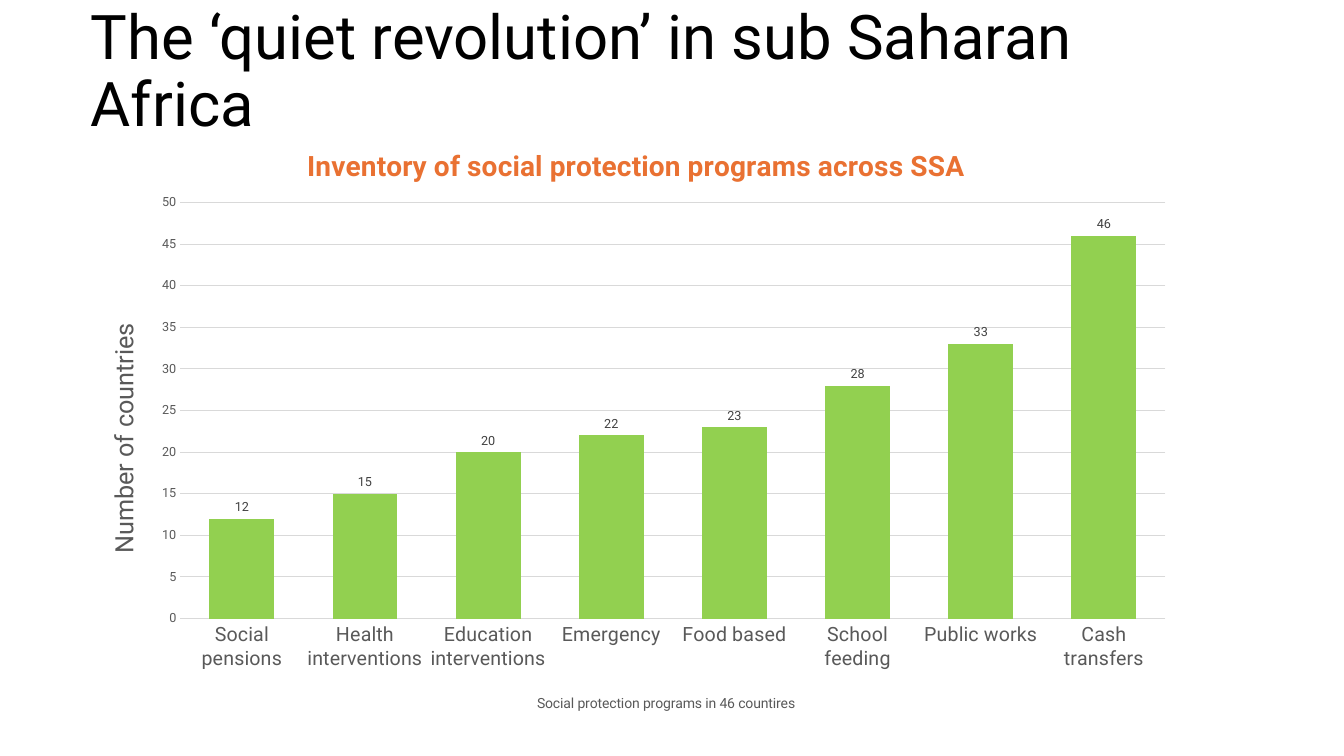
from lxml import etree
from pptx import Presentation
from pptx.chart.data import CategoryChartData
from pptx.dml.color import RGBColor
from pptx.enum.chart import XL_CHART_TYPE as CT, XL_LABEL_POSITION as LP, XL_TICK_MARK as TM
from pptx.enum.text import MSO_ANCHOR, MSO_AUTO_SIZE, PP_ALIGN
from pptx.oxml.ns import qn
from pptx.util import Inches, Pt

BLACK = RGBColor(0x00, 0x00, 0x00)
GREY = RGBColor(0x59, 0x59, 0x59)
DARK = RGBColor(0x40, 0x40, 0x40)
LIGHT = RGBColor(0xD9, 0xD9, 0xD9)
ORANGE = RGBColor(0xE9, 0x71, 0x32)
GREEN = RGBColor(0x92, 0xD0, 0x50)
FONT = "Roboto"


def write(tf, text, size=10, color=GREY, bold=False):
    p = tf.paragraphs[0]
    r = p.add_run()
    r.text = text
    r.font.name = FONT
    r.font.size = Pt(size)
    r.font.bold = bold
    r.font.color.rgb = color
    return p


def place(parent, index, **spots):
    for old in parent.findall(qn("c:layout")):
        parent.remove(old)
    layout = parent.makeelement(qn("c:layout"))
    parent.insert(index, layout)
    manual = etree.SubElement(layout, qn("c:manualLayout"))
    if "w" in spots:
        etree.SubElement(manual, qn("c:layoutTarget")).set("val", "inner")
    for mode in ("xMode", "yMode"):
        etree.SubElement(manual, qn("c:" + mode)).set("val", "edge")
    for name, value in spots.items():
        etree.SubElement(manual, qn("c:" + name)).set("val", str(value))


prs = Presentation()
prs.slide_width = Inches(13.33)
prs.slide_height = Inches(7.5)
s = prs.slides.add_slide(prs.slide_layouts[5])

title = s.shapes.title
title.left, title.top = Inches(0.8), Inches(0)
title.width, title.height = Inches(11.5), Inches(1.45)
tf = title.text_frame
tf.word_wrap = True
tf.auto_size = MSO_AUTO_SIZE.NONE
tf.vertical_anchor = MSO_ANCHOR.MIDDLE
p = write(tf, "The ‘quiet revolution’ in sub Saharan Africa", size=44, color=BLACK)
p.alignment = PP_ALIGN.LEFT
p.line_spacing = 0.9

programs = {
    "Social pensions": 12,
    "Health interventions": 15,
    "Education interventions": 20,
    "Emergency": 22,
    "Food based": 23,
    "School feeding": 28,
    "Public works": 33,
    "Cash transfers": 46,
}
data = CategoryChartData()
data.categories = list(programs)
data.add_series("Series 1", list(programs.values()))
chart = s.shapes.add_chart(
    CT.COLUMN_CLUSTERED, Inches(0.8), Inches(1.16), Inches(10.98), Inches(6.07), data
).chart
chart.has_legend = False
chart.font.name = FONT
chart.font.size = Pt(10)

plot = chart.plots[0]
plot.gap_width = 90
plot.overlap = -27
plot.vary_by_categories = False
series = plot.series[0]
series.format.fill.solid()
series.format.fill.fore_color.rgb = GREEN
plot.has_data_labels = True
labels = plot.data_labels
labels.show_value = True
labels.position = LP.OUTSIDE_END

cat_axis, val_axis = chart.category_axis, chart.value_axis
for font, size, color in (
    (cat_axis.tick_labels.font, 14, GREY),
    (val_axis.tick_labels.font, 9, GREY),
    (labels.font, 9, DARK),
):
    font.name = FONT
    font.size = Pt(size)
    font.color.rgb = color
for axis in (cat_axis, val_axis):
    axis.major_tick_mark = axis.minor_tick_mark = TM.NONE
val_axis.minimum_scale = 0
val_axis.maximum_scale = 50
val_axis.major_unit = 5
val_axis.format.line.fill.background()
for line in (cat_axis.format.line, val_axis.major_gridlines.format.line):
    line.color.rgb = LIGHT
    line.width = Pt(0.75)

chart.has_title = True
write(chart.chart_title.text_frame, "Inventory of social protection programs across SSA",
      size=20, color=ORANGE, bold=True)
write(cat_axis.axis_title.text_frame, "Social protection programs in 46 countires")
val_tf = val_axis.axis_title.text_frame
write(val_tf, "Number of countries", size=18)
body = val_tf._txBody.find(qn("a:bodyPr"))
body.set("rot", "-5400000")
body.set("vert", "horz")

place(chart.chart_title._element, 1, x=0.2, y=0.04)
place(cat_axis.axis_title._element, 1, x=0.41, y=0.94)
place(val_axis.axis_title._element, 1, x=0.02, y=0.33)
place(chart._chartSpace.chart.plotArea, 0, x=0.09, y=0.14, w=0.89, h=0.68)

prs.save("out.pptx")
